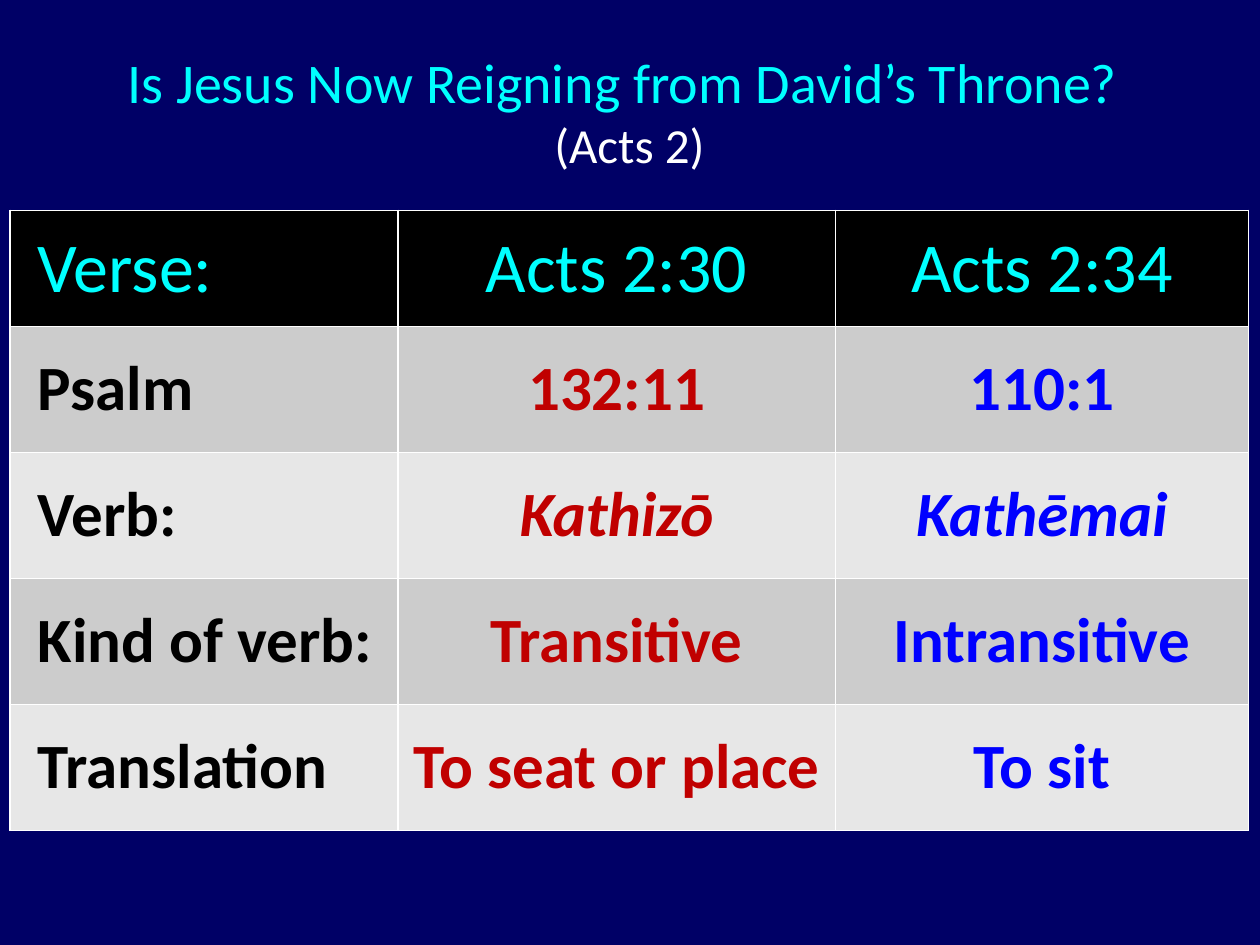
from pptx import Presentation
from pptx.dml.color import RGBColor
from pptx.enum.text import MSO_ANCHOR, MSO_AUTO_SIZE, PP_ALIGN
from pptx.util import Inches, Pt

LEFT, CENTER = PP_ALIGN.LEFT, PP_ALIGN.CENTER
MIDDLE = MSO_ANCHOR.MIDDLE
NO_AUTOFIT = MSO_AUTO_SIZE.NONE
FONT = "Calibri"
COLORS = {
    "navy": "000066", "cyan": "00FFFF", "white": "FFFFFF", "black": "000000",
    "red": "C00000", "blue": "0000FF", "dark_band": "CCCCCC", "light_band": "E7E7E7",
}


def rgb(name):
    return RGBColor.from_string(COLORS[name])


def set_font(font, size, color, bold=False, italic=False):
    font.name = FONT
    font.size = Pt(size)
    font.color.rgb = rgb(color)
    font.bold = bold
    font.italic = italic


prs = Presentation()
prs.slide_width, prs.slide_height = Inches(10), Inches(7.5)
s = prs.slides.add_slide(prs.slide_layouts[5])
s.background.fill.solid()
s.background.fill.fore_color.rgb = rgb("navy")

title = s.shapes.title
title.left, title.top = Inches(0.12), Inches(0.25)
title.width, title.height = Inches(9.75), Inches(1.25)
tf = title.text_frame
tf.word_wrap = True
tf.auto_size = NO_AUTOFIT
tf.vertical_anchor = MIDDLE
p = tf.paragraphs[0]
p.alignment = CENTER
r = p.add_run()
r.text = "Is Jesus Now Reigning from David’s Throne? "
set_font(r.font, 32, "cyan")
p.add_line_break()
r = p.add_run()
r.text = "(Acts 2)"
set_font(r.font, 28, "white")

rows = [
    ("Verse:", "Acts 2:30", "Acts 2:34"),
    ("Psalm", "132:11", "110:1"),
    ("Verb:", "Kathizō", "Kathēmai"),
    ("Kind of verb:", "Transitive", "Intransitive"),
    ("Translation", "To seat or place", "To sit"),
]
col_widths = [3.08, 3.47, 3.28]
row_heights = [0.92, 1, 1, 1, 1]
col_colors = ["black", "red", "blue"]

table = s.shapes.add_table(
    len(rows), len(col_widths), Inches(0.08), Inches(1.67),
    Inches(sum(col_widths)), Inches(sum(row_heights))).table
for col, width in zip(table.columns, col_widths):
    col.width = Inches(width)
for row, height in zip(table.rows, row_heights):
    row.height = Inches(height)

for i, texts in enumerate(rows):
    header = i == 0
    band = "black" if header else "dark_band" if i % 2 else "light_band"
    for j, text in enumerate(texts):
        cell = table.cell(i, j)
        cell.fill.solid()
        cell.fill.fore_color.rgb = rgb(band)
        cell.vertical_anchor = MIDDLE
        cell.text = text
        p = cell.text_frame.paragraphs[0]
        p.alignment = CENTER if j else LEFT
        if j == 0:
            cell.margin_left = Inches(0.22)
        if header:
            p.space_after = Pt(12)
            set_font(p.font, 40, "cyan")
        else:
            set_font(p.font, 36, col_colors[j], bold=True,
                     italic=texts[0] == "Verb:" and j > 0)

prs.save("out.pptx")
